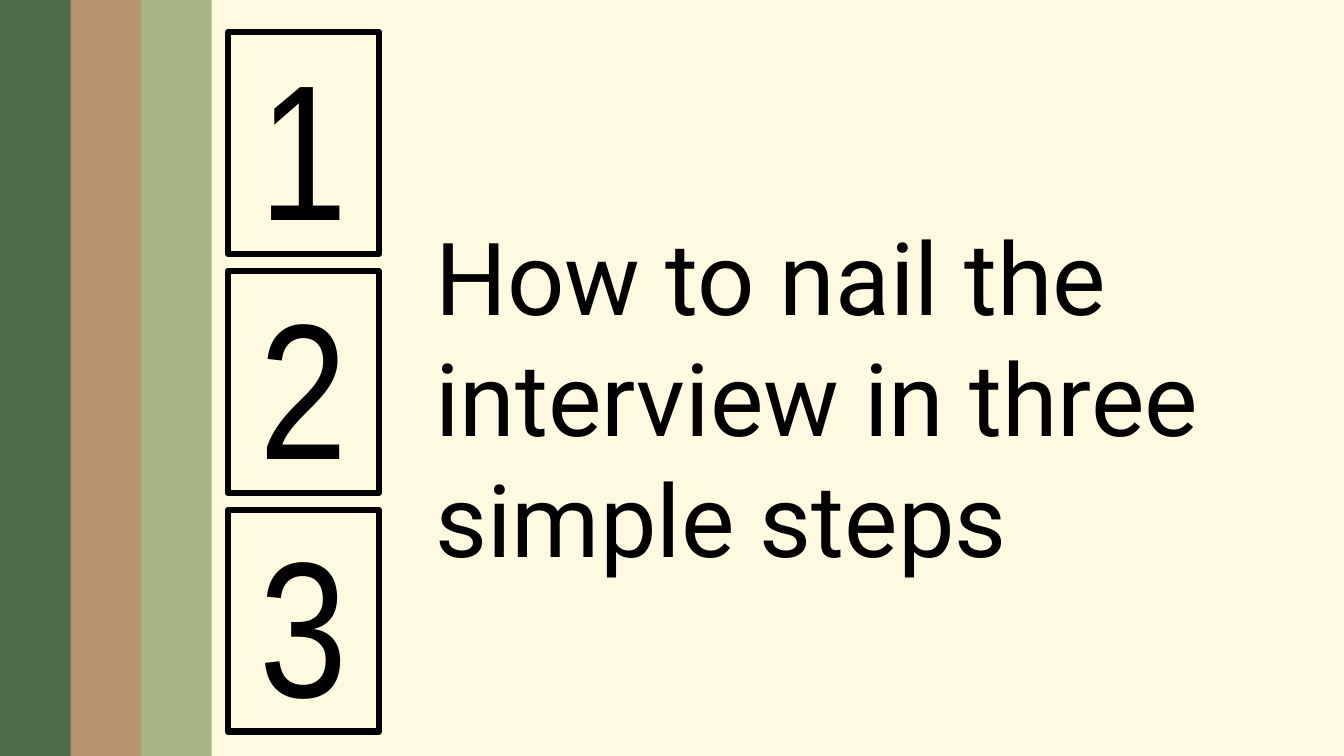
import pptx
import pptx.dml.color
import pptx.enum.shapes
import pptx.enum.text
import pptx.util

Pt = pptx.util.Pt
SHAPES = pptx.enum.shapes.MSO_SHAPE
ALIGN = pptx.enum.text.PP_ALIGN
ANCHOR = pptx.enum.text.MSO_ANCHOR


def color(hex_code):
    return pptx.dml.color.RGBColor.from_string(hex_code)


class CoverSlide:
    """Draws the parts of a cover slide in one shared style."""

    ink = "000000"
    paper = "FEFAE0"
    title_font = "Roboto"
    number_font = "Arial Narrow"

    def __init__(self, deck):
        self.slide = deck.slides.add_slide(deck.slide_layouts[5])
        background = self.slide.background.fill
        background.solid()
        background.fore_color.rgb = color(self.paper)

    def add_text(self, frame, text, font, size, align, anchor):
        frame.word_wrap = True
        frame.vertical_anchor = anchor
        paragraph = frame.paragraphs[0]
        paragraph.alignment = align
        run = paragraph.add_run()
        run.text = text
        run.font.name = font
        run.font.size = Pt(size)
        run.font.color.rgb = color(self.ink)

    def title(self, text, left, top, width, height):
        heading = self.slide.shapes.title
        heading.left, heading.top = Pt(left), Pt(top)
        heading.width, heading.height = Pt(width), Pt(height)
        heading.text_frame.auto_size = pptx.enum.text.MSO_AUTO_SIZE.SHAPE_TO_FIT_TEXT
        self.add_text(heading.text_frame, text, self.title_font, 72, ALIGN.LEFT, ANCHOR.TOP)

    def stripe(self, width, height, fill):
        band = self.slide.shapes.add_shape(SHAPES.ROUNDED_RECTANGLE, 0, 0, Pt(width), Pt(height))
        band.adjustments[0] = 0
        band.shadow.inherit = False
        band.fill.solid()
        band.fill.fore_color.rgb = color(fill)
        band.line.fill.background()

    def step(self, number, left, top, width, height):
        frame = self.slide.shapes.add_shape(
            SHAPES.RECTANGLE, Pt(left), Pt(top), Pt(width), Pt(height))
        frame.shadow.inherit = False
        frame.fill.background()
        frame.line.color.rgb = color(self.ink)
        frame.line.width = Pt(4.5)
        self.add_text(frame.text_frame, str(number), self.number_font, 138,
                      ALIGN.CENTER, ANCHOR.MIDDLE)


def main():
    deck = pptx.Presentation()
    deck.slide_width, deck.slide_height = Pt(960), Pt(540)
    cover = CoverSlide(deck)

    stripe_width = 50.4
    for count, fill in ((3, "A9B388"), (2, "B99470"), (1, "4E6C49")):
        cover.stripe(count * stripe_width, 540, fill)

    cover.title("How to nail the interview in three simple steps", 303.84, 149.76, 616.32, 269.28)

    step_top, step_height, step_gap = 23, 158.4, 12.2
    for index in range(3):
        top = step_top + index * (step_height + step_gap)
        cover.step(index + 1, 162.7, top, 108, step_height)

    deck.save("out.pptx")


if __name__ == "__main__":
    main()
